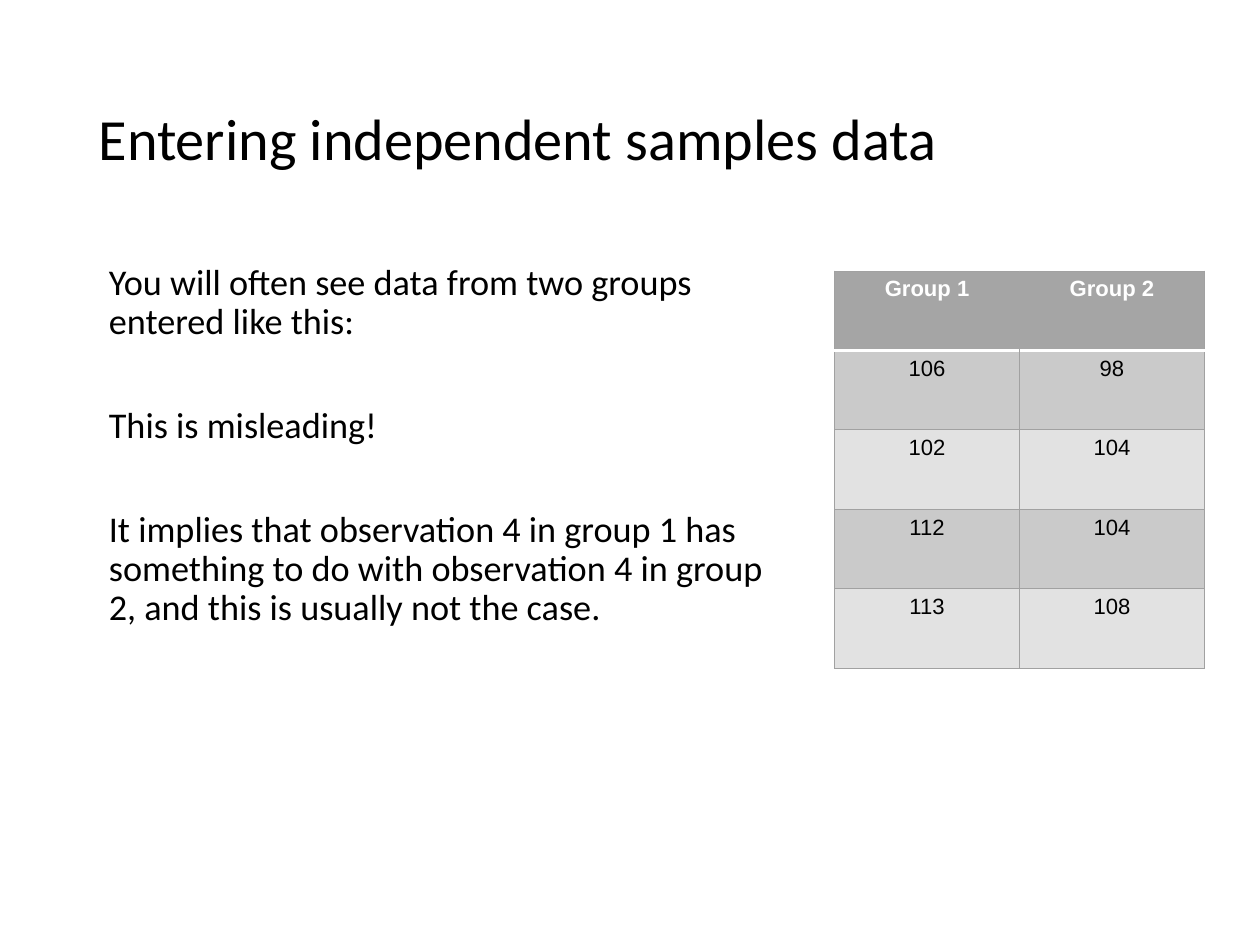
from dataclasses import dataclass

from lxml import etree
from pptx import Presentation
from pptx import util as u
from pptx.dml.color import RGBColor
from pptx.enum import text
from pptx.oxml import ns
from pptx.slide import Slide
from pptx.table import _Cell

BLACK = RGBColor(0x00, 0x00, 0x00)
WHITE = RGBColor(0xFF, 0xFF, 0xFF)
HEADER_GRAY = RGBColor(0xA5, 0xA5, 0xA5)
DARK_BAND = RGBColor(0xCA, 0xCA, 0xCA)
LIGHT_BAND = RGBColor(0xE2, 0xE2, 0xE2)
GRID_GRAY = RGBColor(0xA1, 0xA1, 0xA1)

TEXT_INSET = 0.11
COLUMN_WIDTH, ROW_HEIGHT = 1.63, 0.7
SCORES = [("Group 1", "Group 2"), ("106", "98"), ("102", "104"),
          ("112", "104"), ("113", "108")]


@dataclass(frozen=True)
class Passage:
    wording: str
    space_before: float = 0


@dataclass(frozen=True)
class TextBlock:
    left: float
    top: float
    width: float
    height: float
    size: int
    anchor: text.MSO_ANCHOR
    passages: tuple[Passage, ...]
    indent: float = 0


@dataclass(frozen=True)
class Border:
    color: RGBColor
    width: float


GRID = Border(GRID_GRAY, 0.75)
HEADER_DIVIDER = Border(HEADER_GRAY, 0.75)
HEADER_RULE = Border(WHITE, 2)

TITLE = TextBlock(0.76, 0.44, 9.58, 1.61, 37, text.MSO_ANCHOR.MIDDLE,
                  (Passage("Entering independent samples data"),))
EXPLANATION = TextBlock(
    0.76, 2.22, 6.18, 5.29, 23, text.MSO_ANCHOR.TOP,
    (Passage("You will often see data from two groups entered like this:", 8),
     Passage("This is misleading!", 41),
     Passage("It implies that observation 4 in group 1 has something to do with "
             "observation 4 in group 2, and this is usually not the case.", 41)),
    indent=0.09)


def draw_text(slide: Slide, block: TextBlock) -> None:
    frame = slide.shapes.add_textbox(
        u.Inches(block.left), u.Inches(block.top),
        u.Inches(block.width), u.Inches(block.height)).text_frame
    frame.word_wrap = True
    frame.vertical_anchor = block.anchor
    frame.margin_left = frame.margin_right = u.Inches(TEXT_INSET)
    frame.margin_top = frame.margin_bottom = u.Inches(TEXT_INSET)
    for index, passage in enumerate(block.passages):
        paragraph = frame.add_paragraph() if index else frame.paragraphs[0]
        paragraph.line_spacing = 0.9
        paragraph.space_before = u.Pt(passage.space_before)
        paragraph._p.get_or_add_pPr().set("marL", str(u.Inches(block.indent)))
        run = paragraph.add_run()
        run.text = passage.wording
        run.font.name = "Calibri"
        run.font.size = u.Pt(block.size)
        run.font.color.rgb = BLACK


def set_borders(cell: _Cell, borders: dict[str, Border]) -> None:
    properties = cell._tc.get_or_add_tcPr()
    for side in "LRTB":
        border = borders[side]
        line = etree.SubElement(properties, ns.qn(f"a:ln{side}"),
                                w=str(u.Pt(border.width)))
        fill = etree.SubElement(line, ns.qn("a:solidFill"))
        etree.SubElement(fill, ns.qn("a:srgbClr"), val=str(border.color))


def draw_cell(cell: _Cell, value: str, row: int, column: int) -> None:
    is_header = row == 0
    # Borders: plain grid, with a white rule under the header
    borders = dict.fromkeys("LRTB", GRID)
    if is_header:
        borders["R" if column == 0 else "L"] = HEADER_DIVIDER
        borders["B"] = HEADER_RULE
    elif row == 1:
        borders["T"] = HEADER_RULE
    set_borders(cell, borders)

    # Banded fill
    cell.fill.solid()
    band = DARK_BAND if row % 2 else LIGHT_BAND
    cell.fill.fore_color.rgb = HEADER_GRAY if is_header else band

    # Value
    paragraph = cell.text_frame.paragraphs[0]
    paragraph.alignment = text.PP_ALIGN.CENTER
    run = paragraph.add_run()
    run.text = value
    run.font.name = "Arial"
    run.font.size = u.Pt(14)
    run.font.bold = is_header
    run.font.color.rgb = WHITE if is_header else BLACK


def draw_scores(slide: Slide) -> None:
    rows, columns = len(SCORES), len(SCORES[0])
    scores = slide.shapes.add_table(
        rows, columns, u.Inches(7.36), u.Inches(2.39),
        u.Inches(columns * COLUMN_WIDTH), u.Inches(rows * ROW_HEIGHT)).table
    scores.horz_banding = False
    for row, values in enumerate(SCORES):
        for column, value in enumerate(values):
            draw_cell(scores.cell(row, column), value, row, column)


def main() -> None:
    deck = Presentation()
    deck.slide_width, deck.slide_height = u.Inches(11.11), u.Inches(8.33)
    slide = deck.slides.add_slide(deck.slide_layouts[6])
    for block in (TITLE, EXPLANATION):
        draw_text(slide, block)
    draw_scores(slide)
    deck.save("out.pptx")


if __name__ == "__main__":
    main()
